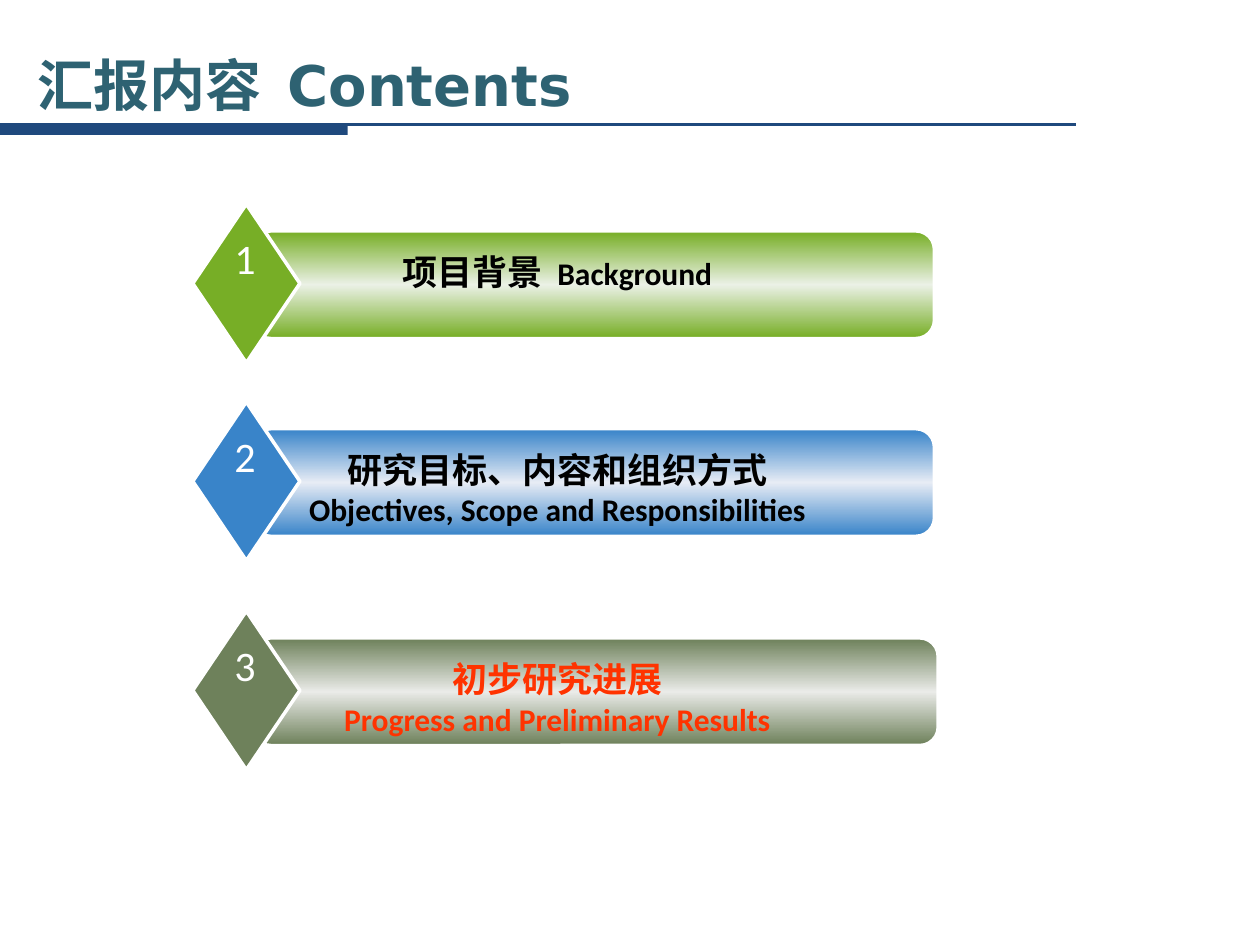
from copy import deepcopy

from lxml.etree import SubElement
from pptx import Presentation
from pptx.dml.color import RGBColor
from pptx.enum.shapes import MSO_CONNECTOR, MSO_SHAPE
from pptx.enum.text import MSO_ANCHOR, MSO_AUTO_SIZE, PP_ALIGN
from pptx.oxml.ns import qn
from pptx.util import Inches, Pt

NAVY = RGBColor(0x1F, 0x49, 0x7D)
TEAL = RGBColor(0x2E, 0x62, 0x72)
WHITE = RGBColor(0xFF, 0xFF, 0xFF)
BLACK = RGBColor(0x00, 0x00, 0x00)
RED = RGBColor(0xFF, 0x33, 0x00)
GREEN = RGBColor(0x77, 0xAE, 0x26)
PALE_GREEN = RGBColor(0xEB, 0xF1, 0xE6)
BLUE = RGBColor(0x39, 0x84, 0xC9)
PALE_BLUE = RGBColor(0xE7, 0xEC, 0xF5)
OLIVE = RGBColor(0x6E, 0x81, 0x5B)
PALE_OLIVE = RGBColor(0xEA, 0xEB, 0xE8)

TITLE_FORMAT = {"name": "DejaVu Sans", "size": Pt(32), "bold": True}
CHINESE_FORMAT = {"name": "Calibri", "size": Pt(20), "bold": True}
ENGLISH_FORMAT = {"name": "Calibri", "size": Pt(18), "bold": True}
NUMBER_FORMAT = {"name": "Calibri", "size": Pt(24)}

# top, bar width, colour, pale middle, text colour, lines of (text, format) runs
ITEMS = [
    (1.62, 5.4, GREEN, PALE_GREEN, BLACK,
     [[("项目背景", CHINESE_FORMAT), ("  Background", ENGLISH_FORMAT)]]),
    (3.19, 5.4, BLUE, PALE_BLUE, BLACK,
     [[("研究目标、内容和组织方式", CHINESE_FORMAT)],
      [("Objectives, Scope and Responsibilities", ENGLISH_FORMAT)]]),
    (4.85, 5.43, OLIVE, PALE_OLIVE, RED,
     [[("初步研究进展", CHINESE_FORMAT)],
      [("Progress and Preliminary Results", ENGLISH_FORMAT)]]),
]


def add_run(paragraph, text, text_format, color):
    run = paragraph.add_run()
    run.text = text
    for name, value in text_format.items():
        setattr(run.font, name, value)
    run.font.color.rgb = color


def add_outlined_shape(slide, kind, left, top, width, height, line_width):
    shape = slide.shapes.add_shape(
        kind, Inches(left), Inches(top), Inches(width), Inches(height))
    shape.shadow.inherit = False
    shape.line.color.rgb = WHITE
    shape.line.width = Pt(line_width)
    return shape


def fill_with_band(shape, edge, middle):
    """Fill top to bottom from edge colour to middle colour and back."""
    fill = shape.fill
    fill.gradient()
    fill.gradient_angle = 90
    first, last = fill.gradient_stops
    first.color.rgb = last.color.rgb = edge
    first.position, last.position = 0, 1
    stops = shape._element.spPr.find(qn("a:gradFill")).find(qn("a:gsLst"))
    stops.insert(1, deepcopy(stops[0]))
    center = fill.gradient_stops[1]
    center.position = 0.5
    center.color.rgb = middle


def add_centered_text(slide, left, top, width, height, lines, color, wrap):
    box = slide.shapes.add_textbox(
        Inches(left), Inches(top), Inches(width), Inches(height))
    frame = box.text_frame
    frame.word_wrap = wrap
    frame.auto_size = MSO_AUTO_SIZE.SHAPE_TO_FIT_TEXT
    for index, runs in enumerate(lines):
        paragraph = frame.add_paragraph() if index else frame.paragraphs[0]
        paragraph.alignment = PP_ALIGN.CENTER
        for text, text_format in runs:
            add_run(paragraph, text, text_format, color)


def add_header_rule(slide, left, top, width):
    line = slide.shapes.add_connector(
        MSO_CONNECTOR.STRAIGHT, Inches(left), Inches(top),
        Inches(left + width), Inches(top))
    line.line.color.rgb = NAVY
    line.line.width = Pt(1.5)
    SubElement(line._element.spPr, qn("a:effectLst"))
    block = slide.shapes.add_shape(
        MSO_SHAPE.RECTANGLE, Inches(left), Inches(top), Inches(2.76), Inches(0.08))
    block.shadow.inherit = False
    block.fill.solid()
    block.fill.fore_color.rgb = NAVY
    block.line.fill.background()


def add_title(slide, left, top, width, height):
    title = slide.shapes.title
    title.left, title.top = Inches(left), Inches(top)
    title.width, title.height = Inches(width), Inches(height)
    frame = title.text_frame
    frame.auto_size = MSO_AUTO_SIZE.NONE
    frame.vertical_anchor = MSO_ANCHOR.MIDDLE
    paragraph = frame.paragraphs[0]
    paragraph.alignment = PP_ALIGN.LEFT
    add_run(paragraph, "汇报内容  Contents", TITLE_FORMAT, TEAL)


def add_item(slide, left, top, number, bar_width, color, pale, text_color, lines):
    """Add a banded bar with its numbered diamond and centred text."""
    bar = add_outlined_shape(slide, MSO_SHAPE.ROUNDED_RECTANGLE,
                             left + 0.48, top + 0.22, bar_width, 0.84, 1)
    bar.adjustments[0] = 0.167
    fill_with_band(bar, color, pale)
    diamond = add_outlined_shape(slide, MSO_SHAPE.DIAMOND, left, top, 0.85, 1.26, 2)
    diamond.fill.solid()
    diamond.fill.fore_color.rgb = color
    add_centered_text(slide, left + 0.76, top + 0.32, 4.27, 0.12 + 0.31 * len(lines),
                      lines, text_color, True)
    add_centered_text(slide, left + 0.23, top + 0.18, 0.37, 0.5,
                      [[(str(number), NUMBER_FORMAT)]], WHITE, False)


def main():
    presentation = Presentation()
    presentation.slide_width, presentation.slide_height = Inches(10), Inches(7.5)
    slide = presentation.slides.add_slide(presentation.slide_layouts[5])
    add_header_rule(slide, 0, 0.99, 8.54)
    add_title(slide, 0.2, 0.36, 8.42, 0.62)
    for number, (top, *details) in enumerate(ITEMS, 1):
        add_item(slide, 1.53, top, number, *details)
    presentation.save("out.pptx")


if __name__ == "__main__":
    main()
